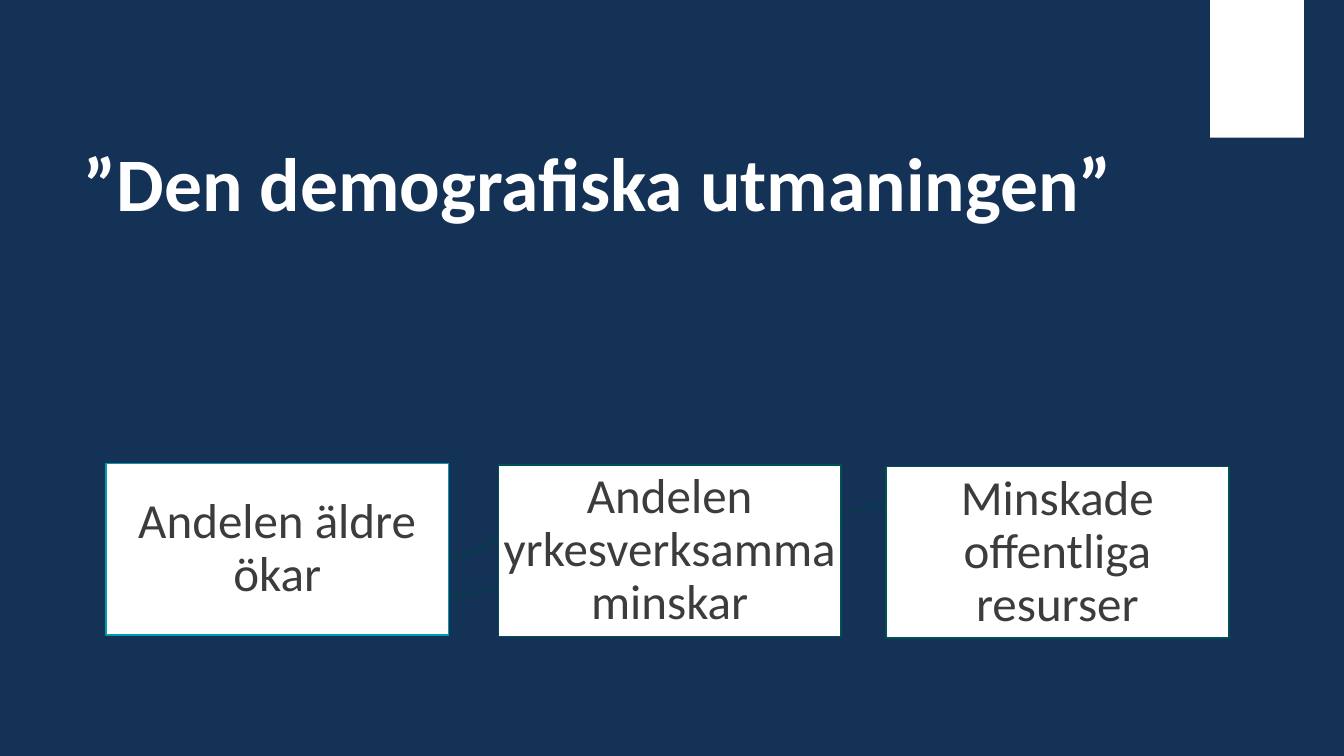
"""Build a slide on the demographic challenge with three linked causes."""
from lxml import etree
from pptx import Presentation
from pptx.dml.color import RGBColor
from pptx.enum import shapes, text
from pptx.oxml import ns
from pptx.util import Cm, Pt

NAVY = RGBColor(0x14, 0x32, 0x56)
WHITE = RGBColor(0xFF, 0xFF, 0xFF)
GREY = RGBColor(0x3C, 0x3C, 0x3C)
TEAL = RGBColor(0x00, 0x9B, 0xAC)
DARK_TEAL = RGBColor(0x00, 0x50, 0x56)
LINK_TEAL = RGBColor(0x00, 0x40, 0x45)


def write(shape, wording, size, color, bold=False, inset=0,
          align=text.PP_ALIGN.LEFT, anchor=text.MSO_ANCHOR.TOP):
    frame = shape.text_frame
    frame.text = wording
    frame.word_wrap = True
    frame.auto_size = text.MSO_AUTO_SIZE.NONE
    frame.vertical_anchor = anchor
    frame.margin_left = frame.margin_right = Cm(inset)
    frame.margin_top = frame.margin_bottom = Cm(inset)
    paragraph = frame.paragraphs[0]
    paragraph.alignment = align
    paragraph.line_spacing = 0.9
    paragraph.space_before = Pt(0)
    font = paragraph.runs[0].font
    font.name, font.size, font.bold = "Calibri", Pt(size), bold
    font.color.rgb = color


deck = Presentation()
deck.slide_width, deck.slide_height = Cm(33.87), Cm(19.05)
slide = deck.slides.add_slide(deck.slide_layouts[5])
slide.background.fill.solid()
slide.background.fill.fore_color.rgb = NAVY

tab = slide.shapes.add_shape(
    shapes.MSO_SHAPE.RECTANGLE, Cm(30.5), Cm(0), Cm(2.36), Cm(3.47))
tab.shadow.inherit = False
tab.fill.solid()
tab.fill.fore_color.rgb = WHITE
tab.line.fill.background()

heading = slide.shapes.title
heading.left, heading.top = Cm(2.11), Cm(3.68)
heading.width, heading.height = Cm(27.36), Cm(4.29)
write(heading, "”Den demografiska utmaningen”", size=54, color=WHITE, bold=True)

BOX_WIDTH, BOX_HEIGHT = 8.64, 4.32
causes = [
    ("Andelen äldre ökar", 2.67, 11.68, TEAL),
    ("Andelen yrkesverksamma minskar", 12.56, 11.72, DARK_TEAL),
    ("Minskade offentliga resurser", 22.33, 11.76, DARK_TEAL),
]

start_x = causes[0][1] + BOX_WIDTH / 2
start_y = causes[0][2] + BOX_HEIGHT
for wording, left, top, outline in reversed(causes[1:]):
    link = slide.shapes.add_connector(
        shapes.MSO_CONNECTOR.STRAIGHT,
        Cm(start_x), Cm(start_y), Cm(left + BOX_WIDTH / 2), Cm(top))
    link.line.color.rgb = LINK_TEAL
    link.line.width = Pt(1)
    etree.SubElement(link._element.spPr, ns.qn("a:effectLst"))

for wording, left, top, outline in causes:
    cause = slide.shapes.add_shape(
        shapes.MSO_SHAPE.RECTANGLE,
        Cm(left), Cm(top), Cm(BOX_WIDTH), Cm(BOX_HEIGHT))
    cause.shadow.inherit = False
    cause.fill.solid()
    cause.fill.fore_color.rgb = WHITE
    cause.line.color.rgb = outline
    cause.line.width = Pt(1)
    write(cause, wording, size=35, color=GREY, inset=0.05,
          align=text.PP_ALIGN.CENTER, anchor=text.MSO_ANCHOR.MIDDLE)

deck.save("out.pptx")
